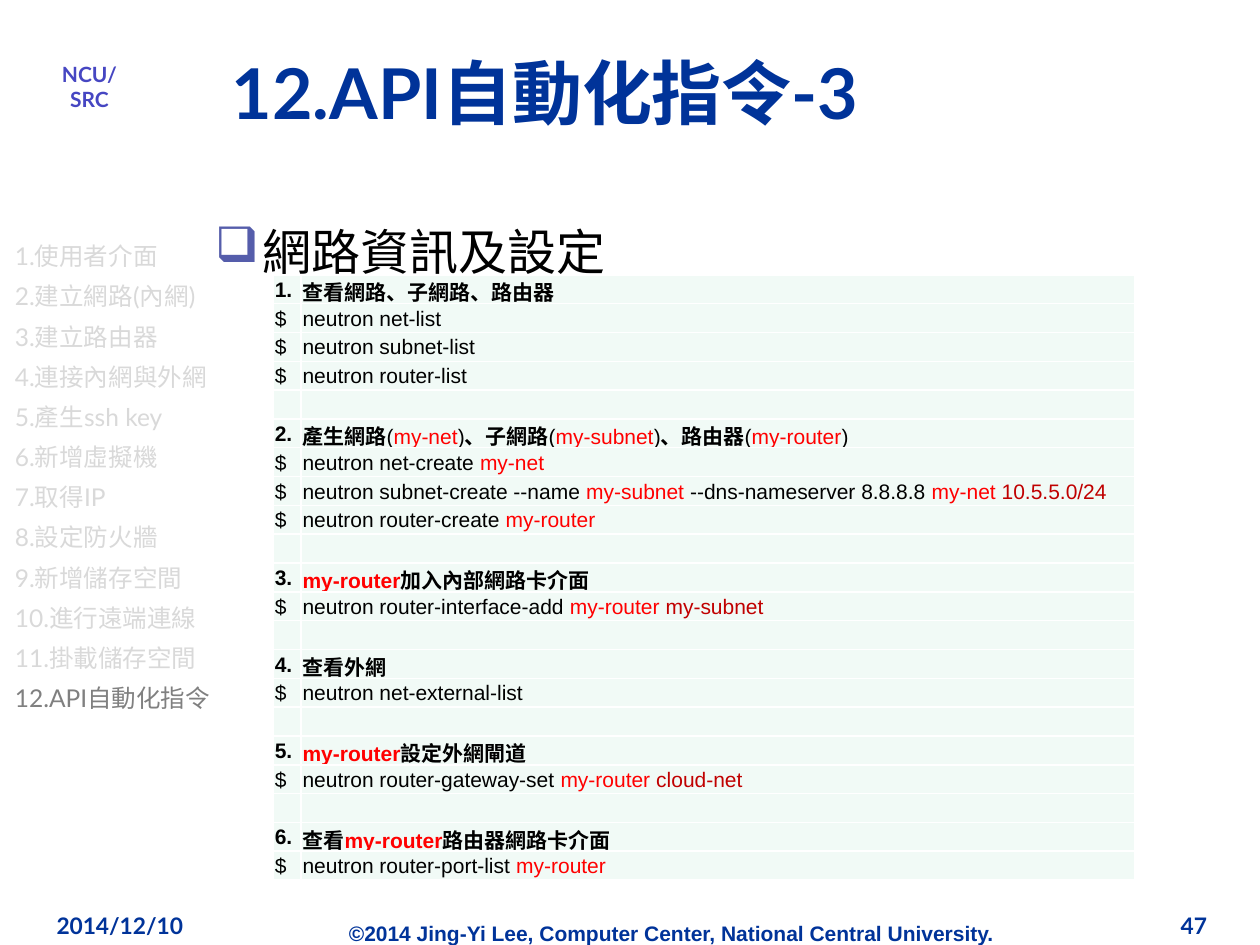
from dataclasses import dataclass
from typing import NamedTuple

from lxml.etree import SubElement
from pptx import Presentation
from pptx.dml.color import RGBColor
from pptx.enum.text import MSO_ANCHOR, PP_ALIGN
from pptx.oxml.ns import qn
from pptx.util import Cm, Pt

COLORS = {
    "black": "000000", "red": "FF0000", "dark_red": "C00000", "white": "FFFFFF",
    "navy": "003399", "violet": "4646C2", "bullet": "555DAB",
    "muted": "D9D9D9", "current": "808080", "cell": "F1FAF6",
}


class Run(NamedTuple):
    text: str
    color: str = "black"
    bold: bool = False


@dataclass
class Label:
    text: str
    box: tuple[float, float, float, float]
    size: float
    color: str
    font: str = "Lato"
    bold: bool = True
    align: PP_ALIGN = PP_ALIGN.LEFT
    wrap: bool = True


@dataclass
class Step:
    heading: list[Run]
    commands: list[list[Run]]


def bold(text: str, color: str = "black") -> Run:
    return Run(text, color, True)


def red(text: str) -> Run:
    return Run(text, "red")


def rgb(color: str) -> RGBColor:
    return RGBColor.from_string(COLORS[color])


def set_attributes(target, values: dict) -> None:
    for name, value in values.items():
        setattr(target, name, value)


def add_run(paragraph, run: Run, size: float, font: str) -> None:
    piece = paragraph.add_run()
    piece.text = run.text
    set_attributes(piece.font, {"size": Pt(size), "name": font, "bold": run.bold})
    piece.font.color.rgb = rgb(run.color)


def add_label(slide, label: Label):
    """Add a one-paragraph text box and return its paragraph."""
    frame = slide.shapes.add_textbox(*map(Cm, label.box)).text_frame
    frame.word_wrap = label.wrap
    paragraph = frame.paragraphs[0]
    paragraph.alignment = label.align
    add_run(paragraph, Run(label.text, label.color, label.bold), label.size, label.font)
    return paragraph


def add_agenda(slide, topics: list[str]) -> None:
    """List all topics, with the last one marked as current."""
    frame = slide.shapes.add_textbox(Cm(0.05), Cm(4.62), Cm(21.59), Cm(13.31)).text_frame
    frame.word_wrap = True
    for index, topic in enumerate(topics):
        paragraph = frame.add_paragraph() if index else frame.paragraphs[0]
        paragraph.line_spacing = 1.2
        paragraph.space_before = Pt(2.8 if index else 0)
        color = "current" if topic == topics[-1] else "muted"
        add_run(paragraph, Run(topic, color), 14, "Lato")


def add_bullet(paragraph, symbol: str) -> None:
    properties = paragraph._p.get_or_add_pPr()
    properties.set("marL", str(Cm(0.96)))
    properties.set("indent", str(-Cm(0.96)))
    color = SubElement(properties, qn("a:buClr"))
    SubElement(color, qn("a:srgbClr"), val=COLORS["bullet"])
    SubElement(properties, qn("a:buChar"), char=symbol)
    paragraph.line_spacing = 1.2


def fill_cell(cell, runs: list[Run]) -> None:
    set_attributes(cell, {
        "margin_left": Cm(0.03), "margin_right": Cm(0.03), "margin_top": Cm(0.03),
        "margin_bottom": 0, "vertical_anchor": MSO_ANCHOR.MIDDLE,
    })
    properties = cell._tc.get_or_add_tcPr()
    for side in ("lnL", "lnR", "lnT", "lnB"):
        border = SubElement(properties, qn(f"a:{side}"), w=str(Pt(1)))
        line_fill = SubElement(border, qn("a:solidFill"))
        SubElement(line_fill, qn("a:srgbClr"), val=COLORS["white"])
    cell.fill.solid()
    cell.fill.fore_color.rgb = rgb("cell")
    paragraph = cell.text_frame.paragraphs[0]
    for run in runs:
        add_run(paragraph, run, 12, "Arial")
    if not runs:
        SubElement(paragraph._p, qn("a:endParaRPr"), sz="1200")


def add_steps(slide, steps: list[Step]) -> None:
    """Number the steps and separate them with an empty table row."""
    rows = []
    for number, step in enumerate(steps, 1):
        if rows:
            rows.append(([], []))
        rows.append(([bold(f"{number}.")], step.heading))
        rows += [([Run("$")], command) for command in step.commands]
    table = slide.shapes.add_table(
        len(rows), 2, Cm(5.51), Cm(5.54), Cm(17.37), Cm(12.22)).table
    set_attributes(table, {"first_row": False, "horz_banding": False})
    for column, width in zip(table.columns, (0.56, 16.81)):
        column.width = Cm(width)
    for table_row, contents in zip(table.rows, rows):
        for cell, runs in zip(table_row.cells, contents):
            fill_cell(cell, runs)


TOPICS = [
    "1.使用者介面", "2.建立網路(內網)", "3.建立路由器", "4.連接內網與外網",
    "5.產生ssh key", "6.新增虛擬機", "7.取得IP", "8.設定防火牆",
    "9.新增儲存空間", "10.進行遠端連線", "11.掛載儲存空間", "12.API自動化指令",
]
STEPS = [
    Step([bold("查看網路、子網路、路由器")],
         [[Run(f"neutron {kind}-list")] for kind in ("net", "subnet", "router")]),
    Step([bold("產生網路"), Run("("), red("my-net"), Run(")"),
          bold("、子網路"), Run("("), red("my-subnet"), Run(")"),
          bold("、路由器"), Run("("), red("my-router"), Run(")")],
         [[Run("neutron net-create "), red("my-net")],
          [Run("neutron subnet-create --name "), red("my-subnet"),
           Run(" --dns-nameserver 8.8.8.8 "), red("my-net "),
           Run("10.5.5.0/24", "dark_red")],
          [Run("neutron router-create "), red("my-router")]]),
    Step([bold("my-router", "red"), bold("加入內部網路卡介面")],
         [[Run("neutron router-interface-add "), red("my-router "),
           Run("my-subnet", "dark_red")]]),
    Step([bold("查看外網")], [[Run("neutron net-external-list")]]),
    Step([bold("my-router", "red"), bold("設定外網閘道")],
         [[Run("neutron router-gateway-set "), red("my-router "),
           Run("cloud-net", "dark_red")]]),
    Step([bold("查看"), bold("my-router", "red"), bold("路由器網路卡介面")],
         [[Run("neutron router-port-list "), red("my-router")]]),
]
LABELS = [
    Label("©2014 Jing-Yi Lee, Computer Center, National Central University.",
          (4.37, 18.44, 18.34, 0.76), 12, "navy", font="Arial", align=PP_ALIGN.CENTER),
    Label("NCU/SRC", (0.89, 1.12, 1.83, 0.61), 12, "violet",
          align=PP_ALIGN.CENTER, wrap=False),
    Label("2014/12/10", (0.89, 18.26, 5.28, 1.27), 13, "navy"),
    Label("47", (19.3, 18.26, 5.28, 1.27), 13, "navy", align=PP_ALIGN.RIGHT),
]
SUBTITLE = Label("網路資訊及設定", (4.09, 4.11, 20.8, 12.8), 28, "black", bold=False)


def main() -> None:
    presentation = Presentation()
    set_attributes(presentation, {"slide_width": Cm(25.4), "slide_height": Cm(19.05)})
    slide = presentation.slides.add_slide(presentation.slide_layouts[5])

    title = slide.shapes.title
    set_attributes(title, {"left": Cm(4.42), "top": Cm(0.71),
                           "width": Cm(20.98), "height": Cm(2.29)})
    title.text_frame.vertical_anchor = MSO_ANCHOR.MIDDLE
    heading = title.text_frame.paragraphs[0]
    heading.alignment = PP_ALIGN.LEFT
    add_run(heading, bold("12.API自動化指令-3", "navy"), 40, "Lato")

    for label in LABELS:
        add_label(slide, label)
    add_agenda(slide, TOPICS)
    add_steps(slide, STEPS)
    add_bullet(add_label(slide, SUBTITLE), "❑")
    presentation.save("out.pptx")


if __name__ == "__main__":
    main()
